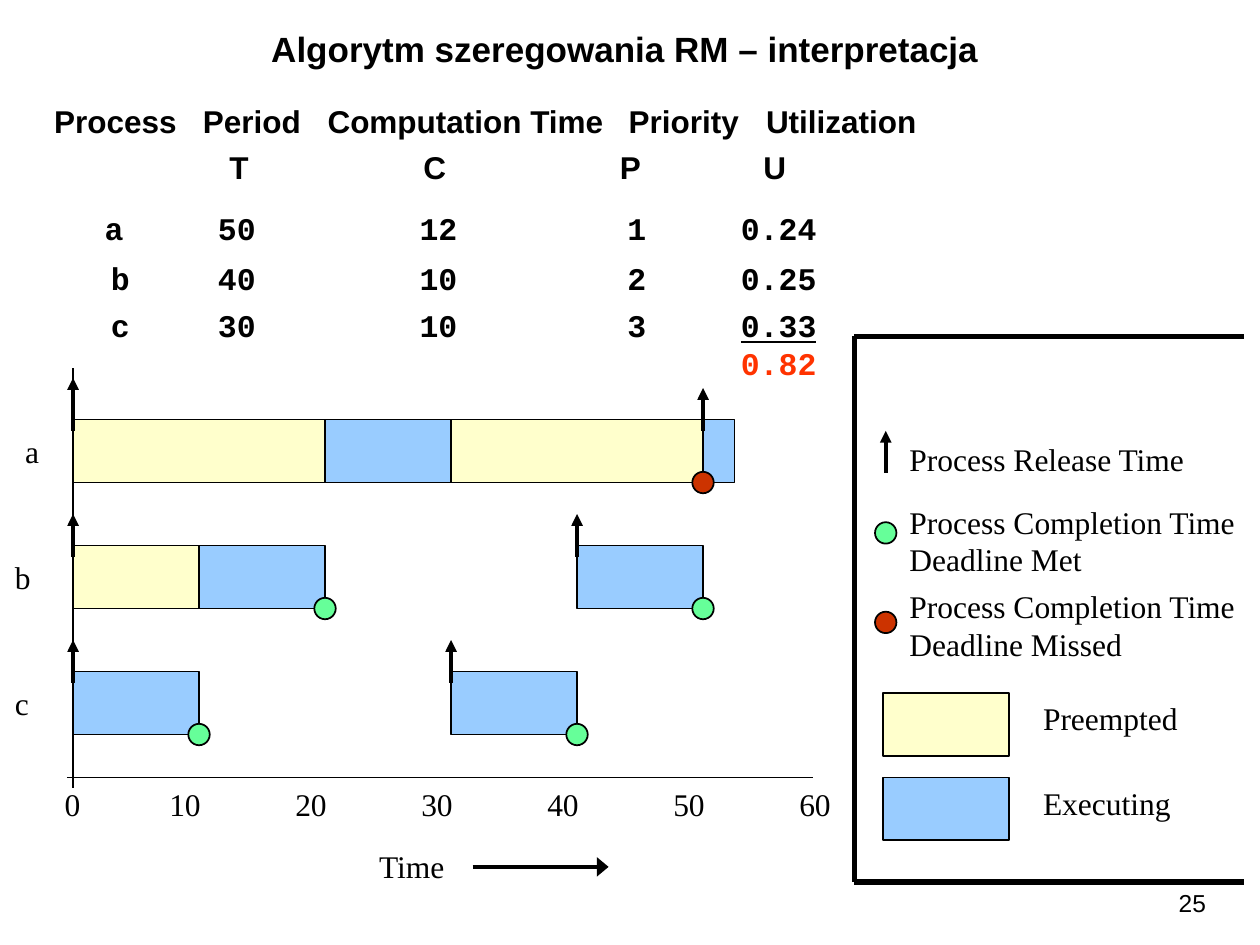
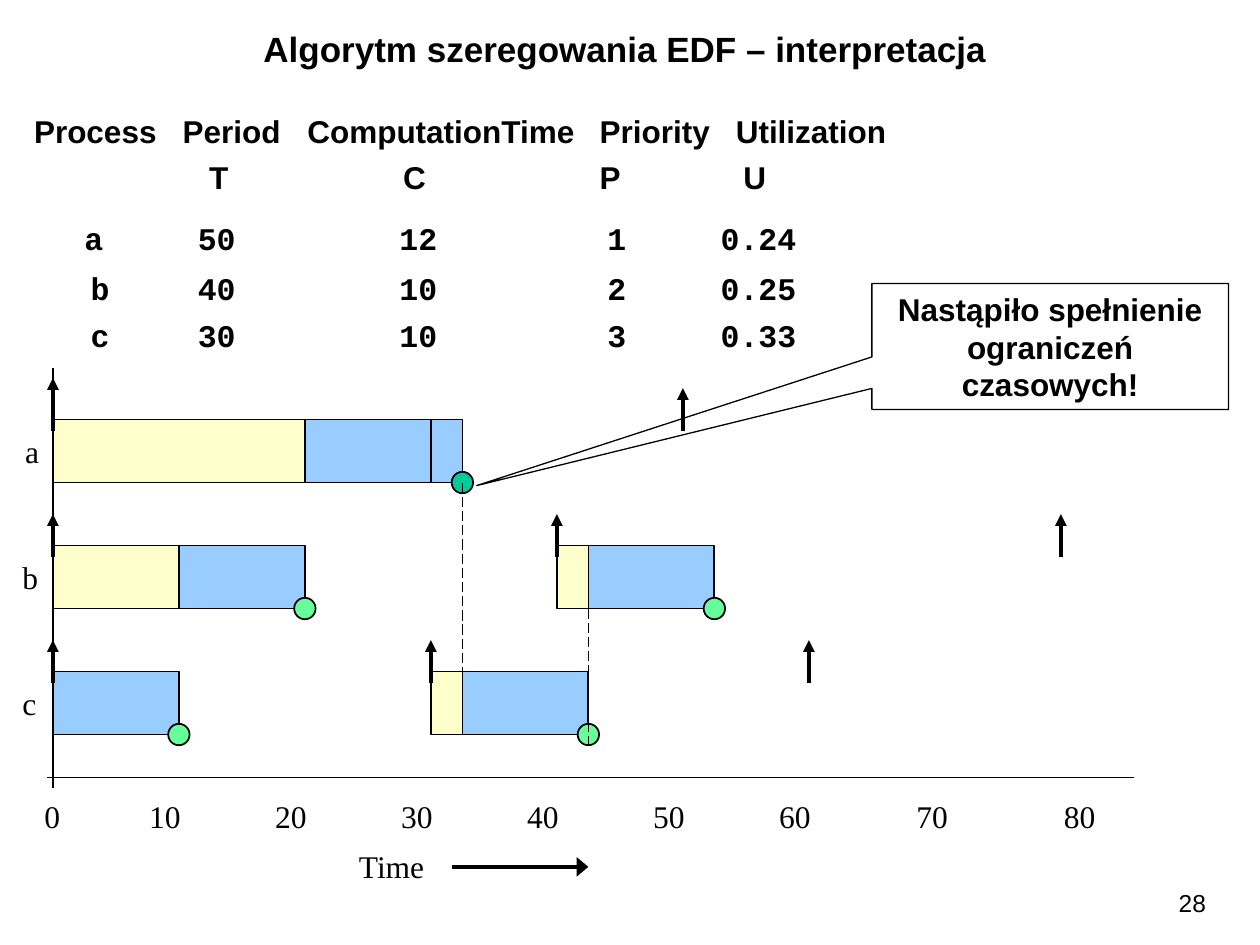
from dataclasses import dataclass

from lxml import etree
from pptx import Presentation
from pptx.dml.color import RGBColor
from pptx.enum.dml import MSO_LINE
from pptx.enum.shapes import MSO_CONNECTOR, MSO_SHAPE
from pptx.enum.text import MSO_ANCHOR, PP_ALIGN
from pptx.oxml.ns import qn
from pptx.util import Inches, Pt

RECT, OVAL, CALLOUT = MSO_SHAPE.RECTANGLE, MSO_SHAPE.OVAL, MSO_SHAPE.RECTANGULAR_CALLOUT
STRAIGHT, LONG_DASH = MSO_CONNECTOR.STRAIGHT, MSO_LINE.LONG_DASH
CENTER, RIGHT, LEFT = PP_ALIGN.CENTER, PP_ALIGN.RIGHT, PP_ALIGN.LEFT
TOP, MIDDLE = MSO_ANCHOR.TOP, MSO_ANCHOR.MIDDLE

BLACK = RGBColor(0x00, 0x00, 0x00)
PREEMPTED = RGBColor(0xFF, 0xFF, 0xCC)
EXECUTING = RGBColor(0x99, 0xCC, 0xFF)
MET = RGBColor(0x66, 0xFF, 0x99)
MET_LAST = RGBColor(0x00, 0xCC, 0x99)
MISSED = RGBColor(0xCC, 0x33, 0x00)
TOTAL = RGBColor(0xFF, 0x33, 0x00)
SANS, SERIF, MONO = "Arial", "Times New Roman", "Courier New"

WIDTH, HEIGHT = 10, 7.5
UNIT = 0.1
LANE_TOP, LANE_STEP, BAR_H = 0.41, 1, 0.5
DOT = 0.17
COLUMNS = (1.25, 1, 2.3, 0.99, 1.54)
ROWS = (0.37, 0.5, 0.4, 0.37, 0.3, 0.3)
SYMBOLS = ("", "T", "C", "P", "U")
SYMBOL_X = (0, 1.49, 3.03, 4.59, 5.73)
VALUE_X = (0.55, 1.4, 3, 4.65, 5.55)
PROCESSES = (("a", "50", "12", "1", "0.24"),
             ("b", "40", "10", "2", "0.25"),
             ("c", "30", "10", "3", "0.33"))


@dataclass
class Lane:
    """Bars (start, length, colour), releases and completions of a process."""
    name: str
    name_x: float
    bars: tuple
    releases: tuple
    completions: tuple


def set_text(tf, lines, font=SERIF, size=18, bold=False, align=LEFT):
    """Write lines as paragraphs in one font."""
    tf.text = "\n".join(lines)
    for p in tf.paragraphs:
        p.alignment = align
        p.font.name, p.font.size, p.font.bold = font, Pt(size), bold
        p.font.color.rgb = BLACK


def add_label(slide, x, y, w, *lines, h=0.4, **style):
    """Add a single-line or multi-line text box."""
    tf = slide.shapes.add_textbox(Inches(x), Inches(y), Inches(w), Inches(h)).text_frame
    tf.word_wrap = False
    set_text(tf, lines, **style)


def add_block(slide, kind, x, y, w, h, fill=None, width=1):
    """Add an outlined preset shape."""
    sp = slide.shapes.add_shape(kind, Inches(x), Inches(y), Inches(w), Inches(h))
    sp.shadow.inherit = False
    if fill is None:
        sp.fill.background()
    else:
        sp.fill.solid()
        sp.fill.fore_color.rgb = fill
    sp.line.color.rgb, sp.line.width = BLACK, Pt(width)
    return sp


def add_dot(slide, x, y, fill):
    """Add a completion dot centred on a point."""
    add_block(slide, OVAL, x - DOT / 2, y - DOT / 2, DOT, DOT, fill)


def add_line(slide, x1, y1, x2, y2, width=1.0, head=None, dash=None):
    """Add a straight line, with an arrowhead of the given breadth at its end."""
    line = slide.shapes.add_connector(STRAIGHT, Inches(x1), Inches(y1), Inches(x2), Inches(y2))
    line.line.color.rgb, line.line.width = BLACK, Pt(width)
    if dash is not None:
        line.line.dash_style = dash
    if head:
        etree.SubElement(line.line._get_or_add_ln(), qn("a:tailEnd"), type="triangle", w=head)
    etree.SubElement(line._element.spPr, qn("a:effectLst"))


def add_frame(prs, title, number):
    """Add a slide with its title and page number."""
    slide = prs.slides.add_slide(prs.slide_layouts[5])
    sp = slide.shapes.title
    sp.left, sp.top, sp.width, sp.height = map(Inches, (0.25, 0.17, 9.42, 0.43))
    sp.text_frame.vertical_anchor = MIDDLE
    set_text(sp.text_frame, [title], SANS, 20, True, CENTER)
    add_label(slide, 0.875 * WIDTH, HEIGHT - 0.5, 0.92, number, h=0.33,
              font=SANS, size=14, align=RIGHT)
    return slide


def add_process_table(slide, left, top, headings, heading_x, total=None):
    """Add the process table, each cell indented to its text position."""
    rows = [(headings, heading_x, SANS), (SYMBOLS, SYMBOL_X, SANS)]
    rows += [(values, VALUE_X, MONO) for values in PROCESSES]
    if total:
        rows.append((("", "", "", "", total), VALUE_X, MONO))
    heights = ROWS[:len(rows)]
    table = slide.shapes.add_table(len(rows), len(COLUMNS), Inches(left), Inches(top),
                                   Inches(sum(COLUMNS)), Inches(sum(heights))).table
    table.first_row = table.horz_banding = False
    for column, w in zip(table.columns, COLUMNS):
        column.width = Inches(w)
    for r, (texts, starts, font) in enumerate(rows):
        table.rows[r].height = Inches(heights[r])
        for c, (text, x) in enumerate(zip(texts, starts)):
            cell = table.cell(r, c)
            cell.fill.background()
            cell.vertical_anchor = TOP
            cell.margin_left = Inches(max(0, x - sum(COLUMNS[:c])))
            cell.margin_right = cell.margin_top = cell.margin_bottom = 0
            set_text(cell.text_frame, [text], font, bold=True)
    table.cell(2, 0).margin_left = Inches(0.5)
    if total:
        table.cell(4, 4).text_frame.paragraphs[0].font.underline = True
        table.cell(5, 4).text_frame.paragraphs[0].font.color.rgb = TOTAL


def add_timeline(slide, left, top, lanes, axis_end, ticks, tick_y):
    """Draw the lanes and time axis from an origin at the top of the axis."""
    def at(time):
        """Turn a time into a horizontal position."""
        return left + time * UNIT

    for i, lane in enumerate(lanes):
        y = top + LANE_TOP + i * LANE_STEP
        add_label(slide, lane.name_x, y + 0.05, 0.32, lane.name)
        for start, length, fill in lane.bars:
            add_block(slide, RECT, at(start), y, length * UNIT, BAR_H, fill)
        for time in lane.releases:
            rise = 0.33 if (i, time) == (0, 0) else 0.25
            add_line(slide, at(time), y + 0.09, at(time), y - rise, 2.25, head="med")
        for time, fill in lane.completions:
            add_dot(slide, at(time), y + BAR_H, fill)
    add_line(slide, left, top + 3.33, left, top, 0.75)
    add_line(slide, left - 0.05, top + 3.25, axis_end, top + 3.25)
    for i, x in enumerate(ticks):
        w = 0.45 if i else 0.33
        add_label(slide, left + x - w / 2, top + tick_y, w, str(10 * i))
    add_label(slide, left + 2.33, top + 3.75, 0.75, "Time")
    add_line(slide, left + 3.17, top + 3.96, left + 4.25, top + 3.96, 2.25, head="lg")


def add_legend(slide, left, top, w, h):
    """Draw the legend in a frame open on its right."""
    right, bottom = left + w, top + h
    add_line(slide, right, top, left, top, 3)
    add_line(slide, left, top, left, bottom, 3)
    add_line(slide, right, bottom, left, bottom, 3)
    mark, text = left + 0.25, left + 0.34
    add_line(slide, mark, top + 1.08, mark, top + 0.75, 2.25, head="med")
    add_label(slide, text, top + 0.77, 2.4, "Process Release Time")
    for y, dot_y, outcome, fill in ((1.27, 1.56, "Met", MET), (1.94, 2.27, "Missed", MISSED)):
        add_dot(slide, mark, top + dot_y, fill)
        add_label(slide, text, top + y, 2.8, "Process Completion Time",
                  f"Deadline {outcome}", h=0.7)
    for y, name, fill in ((2.83, "Preempted", PREEMPTED), (3.5, "Executing", EXECUTING)):
        add_block(slide, RECT, left + 0.23, top + y, 1, BAR_H, fill)
        add_label(slide, left + 1.4, top + y, 1.4, name)


def add_callout(slide, left, top, w, h, text):
    """Add the conclusion callout pointing at the last completion."""
    sp = add_block(slide, CALLOUT, left, top, w, h, width=0.75)
    sp.adjustments[0], sp.adjustments[1] = -1.608, 1.104
    sp.text_frame.word_wrap = True
    sp.text_frame.vertical_anchor = MIDDLE
    set_text(sp.text_frame, [text], SANS, bold=True, align=CENTER)


def tick_centres(last):
    """Give label centres, set slightly before each tick after zero."""
    return [0] + [i - 0.11 for i in range(1, last + 1)]


def build_rm(prs):
    """Build the rate-monotonic slide."""
    slide = add_frame(prs, "Algorytm szeregowania RM – interpretacja", "25")
    add_process_table(slide, 0.33, 0.83,
                      ("Process", "Period", "Computation Time", "Priority", "Utilization"),
                      (0.1, 1.28, 2.27, 4.66, 5.75), "0.82")
    lanes = (
        Lane("a", 0.1, ((0, 20, PREEMPTED), (20, 10, EXECUTING), (30, 20, PREEMPTED),
                        (50, 2.5, EXECUTING)), (0, 50), ((50, MISSED),)),
        Lane("b", 0.02, ((0, 10, PREEMPTED), (10, 10, EXECUTING), (40, 10, EXECUTING)),
             (0, 40), ((20, MET), (50, MET))),
        Lane("c", 0.02, ((0, 10, EXECUTING), (30, 10, EXECUTING)),
             (0, 30), ((10, MET), (40, MET))),
    )
    add_timeline(slide, 0.58, 2.92, lanes, 6.45, tick_centres(6), 3.26)
    add_legend(slide, 6.78, 2.67, 3.09, 4.33)


def build_edf(prs):
    """Build the earliest-deadline-first slide."""
    slide = add_frame(prs, "Algorytm szeregowania EDF – interpretacja", "28")
    add_process_table(slide, 0.17, 0.91,
                      ("Process", "Period", "ComputationTime", "Priority", "Utilization"),
                      (0.1, 1.28, 2.27, 4.59, 5.67))
    lanes = (
        Lane("a", 0.1, ((0, 20, PREEMPTED), (20, 10, EXECUTING), (30, 2.5, EXECUTING)),
             (0, 50), ((32.5, MET_LAST),)),
        Lane("b", 0.08, ((0, 10, PREEMPTED), (10, 10, EXECUTING), (40, 2.5, PREEMPTED),
                         (42.5, 10, EXECUTING)), (0, 40, 80), ((20, MET), (52.5, MET))),
        Lane("c", 0.08, ((0, 10, EXECUTING), (30, 2.5, PREEMPTED), (32.5, 10, EXECUTING)),
             (0, 30, 60), ((10, MET), (42.5, MET))),
    )
    add_timeline(slide, 0.42, 2.92, lanes, 9, tick_centres(6) + [6.98, 8.15], 3.36)
    for x, y1, y2 in ((3.67, 3.83, 5.33), (4.67, 4.83, 5.92)):
        add_line(slide, x, y1, x, y2, 0.75, dash=LONG_DASH)
    add_callout(slide, 6.92, 2.25, 2.83, 1, "Nastąpiło spełnienie ograniczeń czasowych!")


def main():
    """Build and save both slides."""
    prs = Presentation()
    prs.slide_width, prs.slide_height = Inches(WIDTH), Inches(HEIGHT)
    build_rm(prs)
    build_edf(prs)
    prs.save("out.pptx")


if __name__ == "__main__":
    main()
